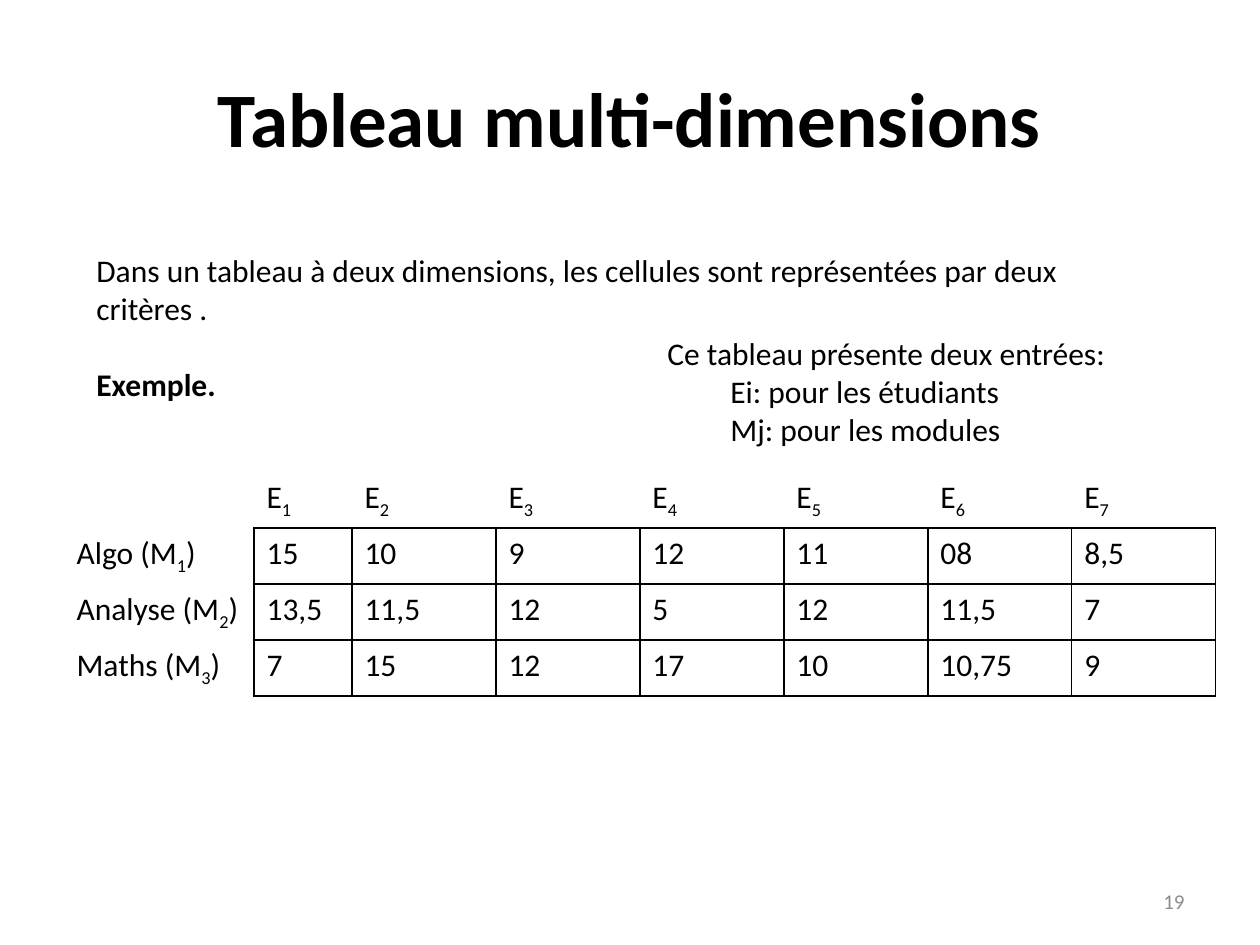
from dataclasses import dataclass

from lxml import etree
from pptx import Presentation
from pptx import util as u
from pptx.dml.color import RGBColor
from pptx.enum import text
from pptx.oxml import ns

EMU_PER_PX = 914400 / 126


@dataclass(frozen=True)
class Theme:
    font: str = "Calibri"
    ink: str = "000000"
    paper: str = "FFFFFF"
    muted: str = "8C8C8C"
    title_size: int = 44
    body_size: int = 18
    number_size: int = 12
    border_width: int = 1


def px(length):
    return u.Emu(round(length * EMU_PER_PX))


def set_attributes(target, values):
    for name, value in values.items():
        setattr(target, name, value)


class SlideBuilder:
    def __init__(self, slide, theme):
        self.slide = slide
        self.theme = theme

    def add_runs(self, paragraph, content, size, color=None, bold=False):
        """Add content as runs, where each "_" puts the next character in subscript."""
        normal, *parts = content.split("_")
        pieces = [(normal, False)]
        for part in parts:
            pieces += [(part[0], True), (part[1:], False)]
        for piece, subscript in pieces:
            if not piece:
                continue
            run = paragraph.add_run()
            run.text = piece
            set_attributes(run.font, {"name": self.theme.font, "size": u.Pt(size), "bold": bold})
            run.font.color.rgb = RGBColor.from_string(color or self.theme.ink)
            if subscript:
                run.font._element.set("baseline", "-25000")

    def text_box(self, box, lines, size, color=None, bold_lines=(), gap=0, frame=None, paragraph=None):
        shape = self.slide.shapes.add_textbox(*map(px, box))
        text_frame = shape.text_frame
        set_attributes(text_frame, {"word_wrap": True, **(frame or {})})
        for index, line in enumerate(lines):
            current = text_frame.add_paragraph() if index else text_frame.paragraphs[0]
            set_attributes(current, paragraph or {})
            if index and gap:
                current.space_before = u.Pt(gap)
            self.add_runs(current, line, size, color, index in bold_lines)

    def border(self, cell, side, color):
        line = etree.SubElement(cell._tc.get_or_add_tcPr(), ns.qn(f"a:ln{side}"),
                                w=str(u.Pt(self.theme.border_width)))
        fill = etree.SubElement(line, ns.qn("a:solidFill"))
        etree.SubElement(fill, ns.qn("a:srgbClr"), val=color)

    def grades_table(self, left, top, widths, row_height, rows):
        """Add a table whose black grid surrounds only the grades."""
        frame = self.slide.shapes.add_table(
            len(rows), len(widths), px(left), px(top), px(sum(widths)), px(row_height * len(rows)))
        table = frame.table
        set_attributes(table, {"first_row": False, "horz_banding": False})
        for column, width in zip(table.columns, widths):
            column.width = px(width)
        for row_index, values in enumerate(rows):
            table.rows[row_index].height = px(row_height)
            for column_index, value in enumerate(values):
                cell = table.cell(row_index, column_index)
                self.add_runs(cell.text_frame.paragraphs[0], value, self.theme.body_size)
                is_grade = row_index > 0 and column_index > 0
                edges = {"L": is_grade, "R": row_index > 0, "T": is_grade, "B": column_index > 0}
                for side, is_dark in edges.items():
                    self.border(cell, side, self.theme.ink if is_dark else self.theme.paper)
                cell.fill.background()


def main():
    theme = Theme()
    presentation = Presentation()
    set_attributes(presentation, {"slide_width": px(1260), "slide_height": px(945)})
    builder = SlideBuilder(presentation.slides.add_slide(presentation.slide_layouts[6]), theme)
    middle = {"vertical_anchor": text.MSO_ANCHOR.MIDDLE}

    builder.text_box((63, 38, 1134, 158), ["Tableau multi-dimensions"], theme.title_size,
                     bold_lines=(0,), frame=middle, paragraph={"alignment": text.PP_ALIGN.CENTER})
    builder.text_box(
        (84, 245, 1062, 165),
        ["Dans un tableau à deux dimensions, les cellules sont représentées par deux critères .",
         "Exemple."],
        theme.body_size, bold_lines=(1,), gap=22)

    students = [f"E_{number}" for number in range(1, 8)]
    grades = {
        "Algo (M_1)": ["15", "10", "9", "12", "11", "08", "8,5"],
        "Analyse (M_2)": ["13,5", "11,5", "12", "5", "12", "11,5", "7"],
        "Maths (M_3)": ["7", "15", "12", "17", "10", "10,75", "9"],
    }
    rows = [["", *students]] + [[module, *values] for module, values in grades.items()]
    builder.grades_table(64, 472, [190, 98] + [144] * 6, 56, rows)

    builder.text_box(
        (655, 328, 476, 127),
        ["Ce tableau présente deux entrées:", "\tEi: pour les étudiants", "\tMj: pour les modules"],
        theme.body_size, frame={"word_wrap": False})
    builder.text_box((903, 876, 294, 50), ["19"], theme.number_size, theme.muted,
                     frame=middle, paragraph={"alignment": text.PP_ALIGN.RIGHT})
    presentation.save("out.pptx")


if __name__ == "__main__":
    main()
